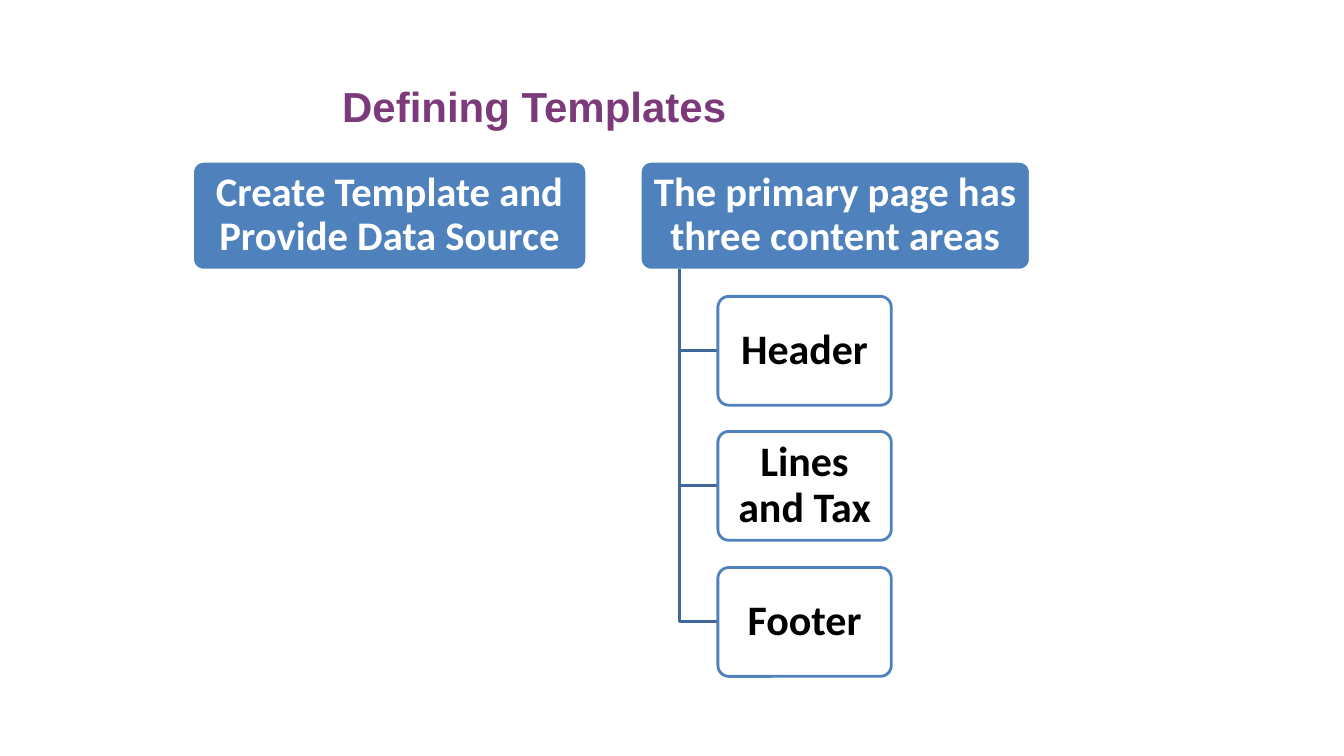
from lxml import etree
from pptx import Presentation
from pptx.dml.color import RGBColor
from pptx.enum.shapes import MSO_SHAPE
from pptx.enum.text import MSO_ANCHOR, PP_ALIGN
from pptx.oxml.ns import qn
from pptx.util import Pt

PX = 9144
THEME = {
    "title": {"name": "Arial", "size": Pt(30), "bold": True, "color": "7C3A7A"},
    "heading": {"name": "Calibri", "size": Pt(29), "bold": True, "color": "FFFFFF"},
    "area": {"name": "Calibri", "size": Pt(30), "bold": True, "color": "000000"},
    "blue": "4F81BD",
    "white": "FFFFFF",
    "branch": "3F6797",
    "line": Pt(2),
}


def write(box, text, style, anchor, spacing, inset):
    frame = box.text_frame
    settings = {
        "word_wrap": True,
        "vertical_anchor": anchor,
        "margin_left": inset[0] * PX,
        "margin_right": inset[0] * PX,
        "margin_top": inset[1] * PX,
        "margin_bottom": inset[1] * PX,
    }
    for name, value in settings.items():
        setattr(frame, name, value)
    para = frame.paragraphs[0]
    para.alignment = PP_ALIGN.CENTER
    para.line_spacing = spacing
    span = para.add_run()
    span.text = text
    for name, value in THEME[style].items():
        if name == "color":
            span.font.color.rgb = RGBColor.from_string(value)
        else:
            setattr(span.font, name, value)


def add_card(left, top, width, text, style, fill, line):
    card = page.shapes.add_shape(
        MSO_SHAPE.ROUNDED_RECTANGLE, left * PX, top * PX, width * PX, CARD_HEIGHT * PX
    )
    card.adjustments[0] = 0.1
    card.shadow.inherit = False
    card.fill.solid()
    card.fill.fore_color.rgb = RGBColor.from_string(THEME[fill])
    card.line.color.rgb = RGBColor.from_string(THEME[line])
    card.line.width = THEME["line"]
    write(card, text, style, MSO_ANCHOR.MIDDLE, 0.9, (6, 4))
    return card


deck = Presentation()
deck.slide_width = 1333 * PX
deck.slide_height = 750 * PX
page = deck.slides.add_slide(deck.slide_layouts[6])

title = page.shapes.add_textbox(38 * PX, 22 * PX, 984 * PX, 113 * PX)
write(title, "Defining Templates", "title", MSO_ANCHOR.BOTTOM, 1.0, (10, 5))

CARD_HEIGHT = 108
HEADING_TOP = 160
headings = [
    (191, 391, "Create Template and Provide Data Source"),
    (635, 387, "The primary page has three content areas"),
]
for left, width, text in headings:
    add_card(left, HEADING_TOP, width, text, "heading", "blue", "white")

TRUNK_LEFT = 674
TRUNK_TOP = HEADING_TOP + CARD_HEIGHT - 1
AREA_LEFT = 712
AREA_PITCH = 134.5
for row, text in enumerate(["Header", "Lines and Tax", "Footer"]):
    top = round(294 + row * AREA_PITCH)
    middle = top + CARD_HEIGHT // 2
    builder = page.shapes.build_freeform(TRUNK_LEFT, TRUNK_TOP, scale=PX)
    builder.add_line_segments([(TRUNK_LEFT, middle), (AREA_LEFT, middle)], close=False)
    branch = builder.convert_to_shape()
    branch.shadow.inherit = False
    branch.fill.background()
    branch.line.color.rgb = RGBColor.from_string(THEME["branch"])
    branch.line.width = THEME["line"]

    card = add_card(AREA_LEFT, top, 172, text, "area", "white", "blue")
    color = card.fill._xPr.find(qn("a:solidFill"))[0]
    etree.SubElement(color, qn("a:alpha")).set("val", "90000")

deck.save("out.pptx")
